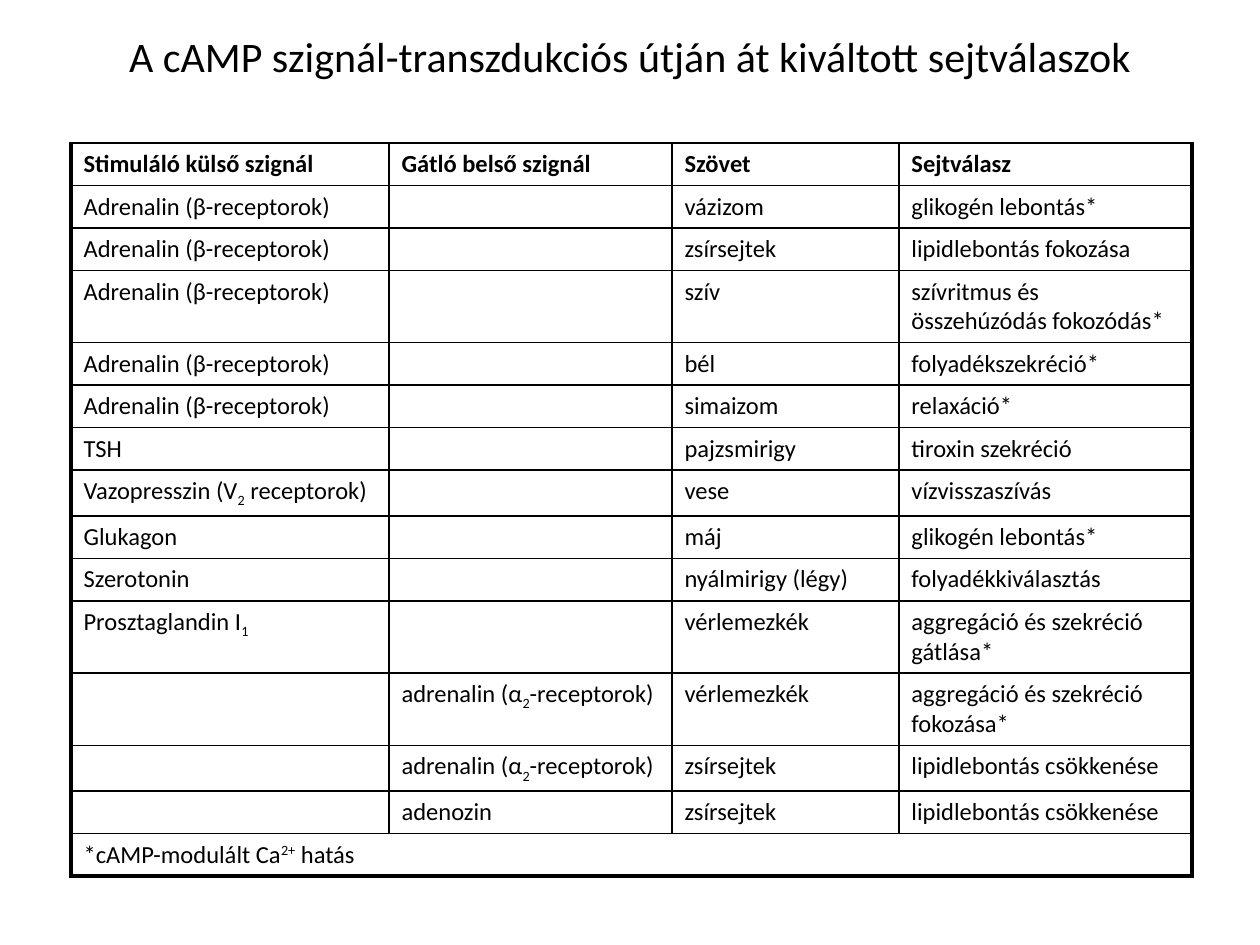
from dataclasses import dataclass

from lxml import etree
from pptx import Presentation
from pptx import util as u
from pptx.dml.color import RGBColor
from pptx.enum import text
from pptx.oxml import ns

PX = u.Inches(1) // 126


@dataclass(frozen=True)
class Theme:
    font: str = "Calibri"
    ink: str = "000000"
    title_size: int = 24
    cell_size: int = 14
    thin: float = 1
    thick: float = 2.25


# Text between bars is shifted: _ lowers it and ^ raises it.
SHIFTS = {"_": -25000, "^": 30000}
ADRENALIN = "Adrenalin (β-receptorok)"
ALPHA = "adrenalin (α|_2|-receptorok)"
ROWS = [
    ("Stimuláló külső szignál", "Gátló belső szignál", "Szövet", "Sejtválasz"),
    (ADRENALIN, "", "vázizom", "glikogén lebontás*"),
    (ADRENALIN, "", "zsírsejtek", "lipidlebontás fokozása"),
    (ADRENALIN, "", "szív", "szívritmus és összehúzódás fokozódás*"),
    (ADRENALIN, "", "bél", "folyadékszekréció*"),
    (ADRENALIN, "", "simaizom", "relaxáció*"),
    ("TSH", "", "pajzsmirigy", "tiroxin szekréció"),
    ("Vazopresszin (V|_2| receptorok)", "", "vese", "vízvisszaszívás"),
    ("Glukagon", "", "máj", "glikogén lebontás*"),
    ("Szerotonin", "", "nyálmirigy (légy)", "folyadékkiválasztás"),
    ("Prosztaglandin I|_1|", "", "vérlemezkék", "aggregáció és szekréció gátlása*"),
    ("", ALPHA, "vérlemezkék", "aggregáció és szekréció fokozása*"),
    ("", ALPHA, "zsírsejtek", "lipidlebontás csökkenése"),
    ("", "adenozin", "zsírsejtek", "lipidlebontás csökkenése"),
    ("*cAMP-modulált Ca|^2+| hatás", "", "", ""),
]
COLUMN_WIDTHS = [318, 283, 227, 293]
ROW_HEIGHT, WRAPPED_HEIGHT = 42, 72


class SlideBuilder:
    def __init__(self, page, theme):
        self.page = page
        self.theme = theme

    def style(self, font, size, bold=False):
        font.name = self.theme.font
        font.size = u.Pt(size)
        font.bold = bold
        font.color.rgb = RGBColor.from_string(self.theme.ink)

    def title(self, words, left, top, width, height):
        box = self.page.shapes.title
        box.left, box.top, box.width, box.height = (
            n * PX for n in (left, top, width, height))
        frame = box.text_frame
        frame.text = words
        frame.vertical_anchor = text.MSO_ANCHOR.MIDDLE
        para = frame.paragraphs[0]
        para.alignment = text.PP_ALIGN.CENTER
        self.style(para.font, self.theme.title_size)

    def cell_text(self, cell, words, bold):
        para = cell.text_frame.paragraphs[0]
        if not words:
            # An empty paragraph takes its height from its end mark.
            end = para._p.get_or_add_endParaRPr()
            end.set("sz", str(self.theme.cell_size * 100))
            return
        for index, piece in enumerate(words.split("|")):
            if not piece:
                continue
            span = para.add_run()
            if index % 2:
                span.text = piece[1:]
                span.font._element.set("baseline", str(SHIFTS[piece[0]]))
            else:
                span.text = piece
        self.style(para.font, self.theme.cell_size, bold)

    def cell_borders(self, cell, thick_sides):
        properties = cell._tc.get_or_add_tcPr()
        for side in "LRTB":
            points = self.theme.thick if side in thick_sides else self.theme.thin
            line = etree.SubElement(properties, ns.qn(f"a:ln{side}"), w=str(u.Pt(points)))
            fill = etree.SubElement(line, ns.qn("a:solidFill"))
            etree.SubElement(fill, ns.qn("a:srgbClr"), val=self.theme.ink)
        cell.fill.background()

    def table(self, rows, left, top, widths, heights):
        """Draw a ruled table with a bold header and a merged last row."""
        frame = self.page.shapes.add_table(
            len(rows), len(widths), left * PX, top * PX,
            sum(widths) * PX, sum(heights) * PX)
        table = frame.table
        table.first_row = table.horz_banding = False
        for column, width in zip(table.columns, widths):
            column.width = width * PX
        last_row, last_column = len(rows) - 1, len(widths) - 1
        for r, (words, height) in enumerate(zip(rows, heights)):
            table.rows[r].height = height * PX
            for c, entry in enumerate(words):
                cell = table.cell(r, c)
                self.cell_text(cell, entry, bold=r == 0)
                sides = "L" if c == 0 else ""
                sides += "R" if c == last_column or r == last_row else ""
                sides += "B" if r == last_row else ""
                self.cell_borders(cell, sides)
        table.cell(last_row, 0).merge(table.cell(last_row, last_column))


def main():
    deck = Presentation()
    deck.slide_width, deck.slide_height = 1260 * PX, 945 * PX
    page = deck.slides.add_slide(deck.slide_layouts[5])
    builder = SlideBuilder(page, Theme())
    builder.title("A cAMP szignál-transzdukciós útján át kiváltott sejtválaszok",
                  0, 1, 1260, 110)
    heights = [WRAPPED_HEIGHT if len(row[3]) > 30 else ROW_HEIGHT for row in ROWS]
    builder.table(ROWS, 71, 143, COLUMN_WIDTHS, heights)
    deck.save("out.pptx")


if __name__ == "__main__":
    main()
